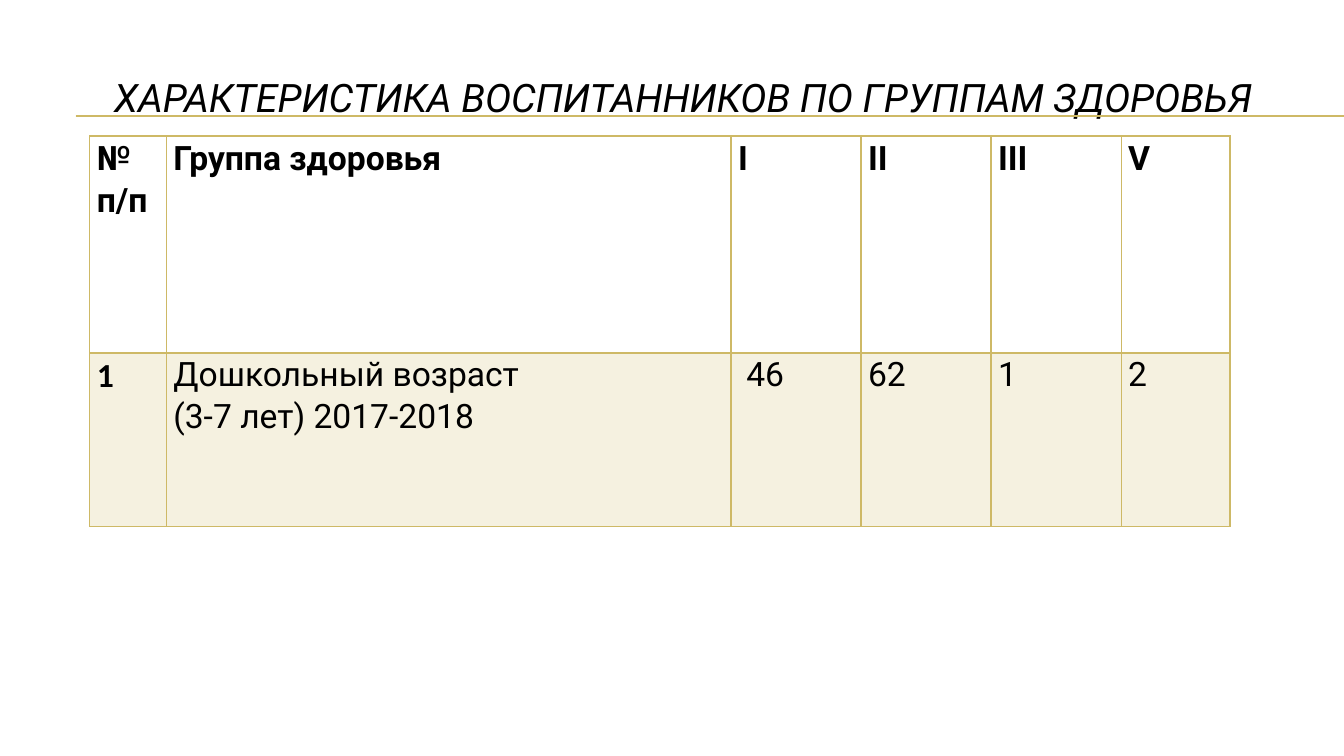
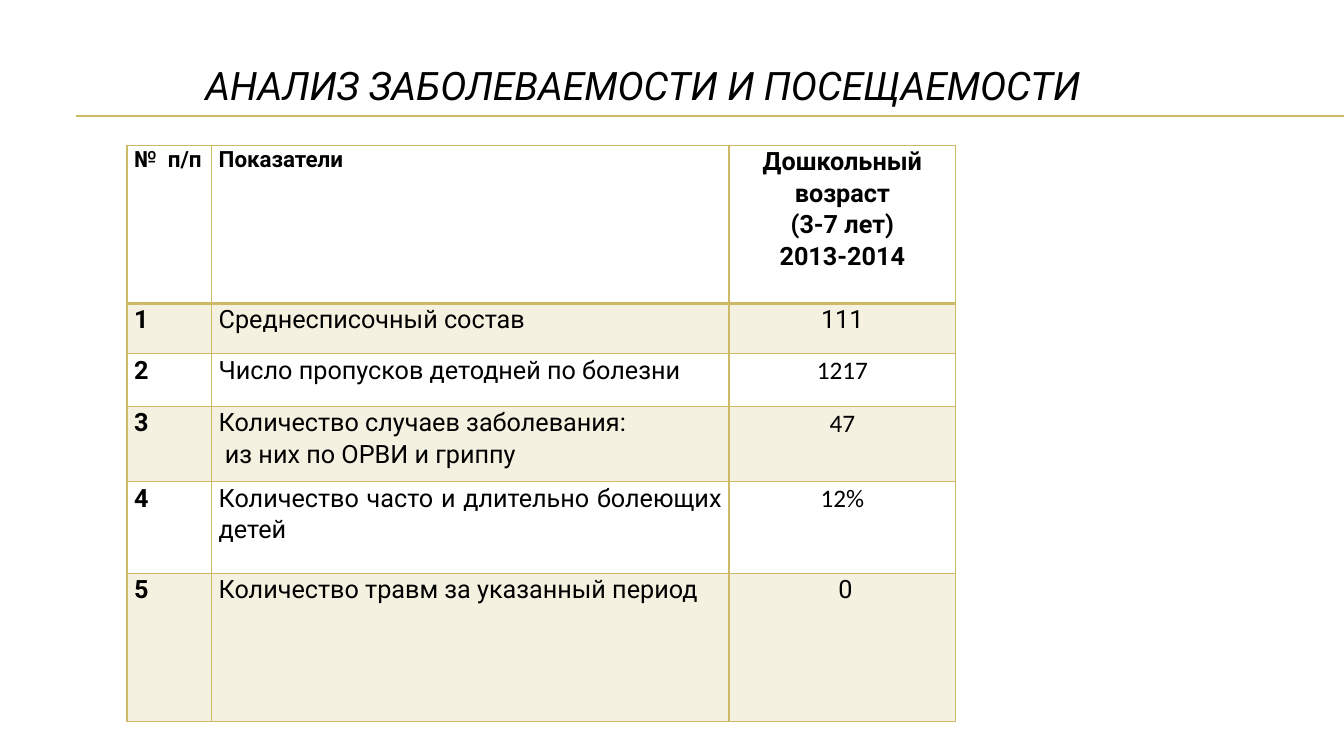
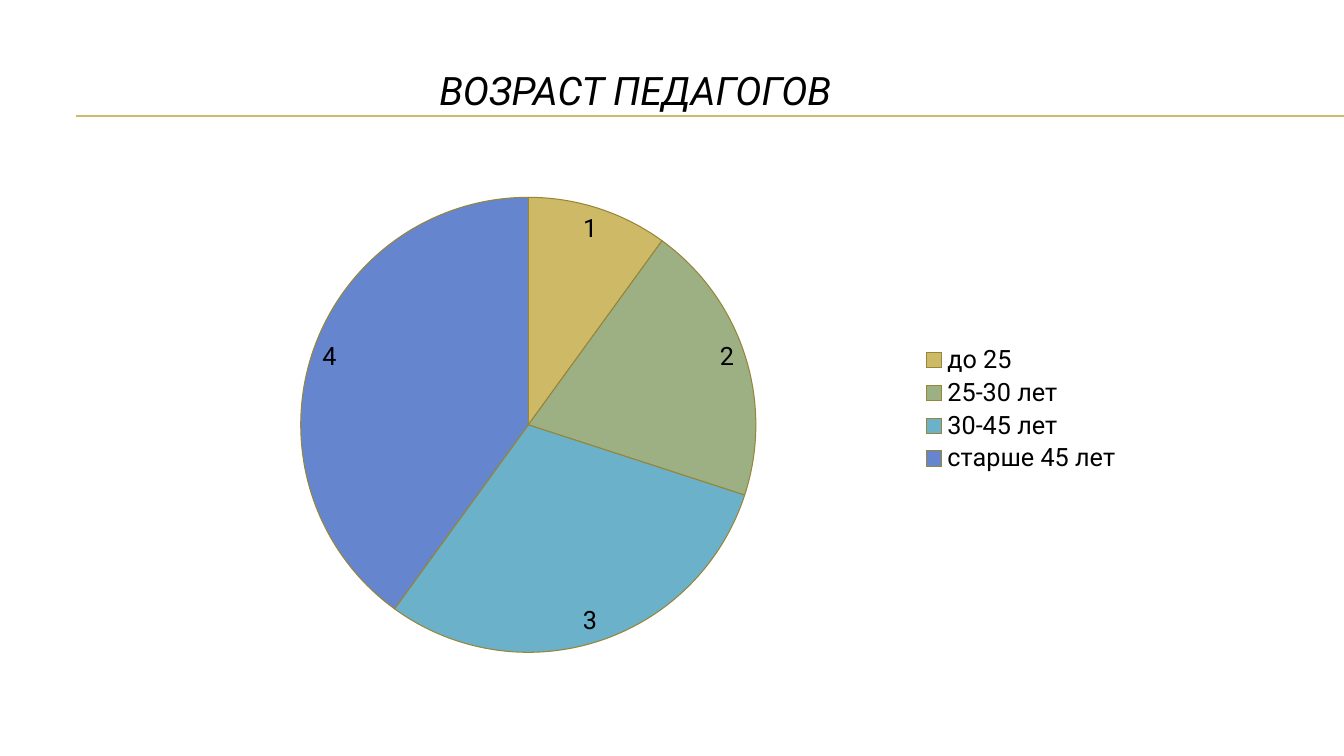
from lxml import etree
from pptx import Presentation
from pptx.chart.data import CategoryChartData
from pptx.dml.color import RGBColor
from pptx.enum.chart import XL_CHART_TYPE, XL_LABEL_POSITION, XL_LEGEND_POSITION
from pptx.enum.shapes import MSO_CONNECTOR
from pptx.enum.text import MSO_ANCHOR, PP_ALIGN
from pptx.oxml import parse_xml
from pptx.oxml.ns import nsdecls, qn
from pptx.util import Inches, Pt

CENTER, JUSTIFY = PP_ALIGN.CENTER, PP_ALIGN.JUSTIFY
MIDDLE = MSO_ANCHOR.MIDDLE
STRAIGHT = MSO_CONNECTOR.STRAIGHT
PIE = XL_CHART_TYPE.PIE
BEST_FIT = XL_LABEL_POSITION.BEST_FIT
LEGEND_RIGHT = XL_LEGEND_POSITION.RIGHT

SLIDE_WIDTH, SLIDE_HEIGHT = 13.33, 7.5
TITLE_ONLY = 5


def color(value):
    return RGBColor.from_string(value)


class Deck:
    """Shared style and the slide being built."""

    font_name = "Roboto"
    number_font = "Calibri"
    text_color = "000000"
    gold = "CEB966"
    band = "F5F1E0"
    slice_line = "978538"
    slice_colors = ("CEB966", "9CB084", "6BB1C9", "6585CF")

    def __init__(self):
        self.presentation = Presentation()
        self.presentation.slide_width = Inches(SLIDE_WIDTH)
        self.presentation.slide_height = Inches(SLIDE_HEIGHT)
        self.slide = None

    def style_font(self, font, size, bold=False, italic=False, name=None):
        font.name = name or self.font_name
        font.size = Pt(size)
        font.bold = bold
        font.italic = italic
        font.color.rgb = color(self.text_color)

    def add_slide(self, title, left, top, width, height):
        layout = self.presentation.slide_layouts[TITLE_ONLY]
        self.slide = self.presentation.slides.add_slide(layout)
        for y in (1.15, 1.16):
            self.add_rule(y)
        shape = self.slide.shapes.title
        shape.left, shape.top = Inches(left), Inches(top)
        shape.width, shape.height = Inches(width), Inches(height)
        frame = shape.text_frame
        frame.text = title
        frame.word_wrap = True
        frame.vertical_anchor = MIDDLE
        paragraph = frame.paragraphs[0]
        paragraph.alignment = CENTER
        self.style_font(paragraph.runs[0].font, 28, italic=True)

    def add_rule(self, y):
        rule = self.slide.shapes.add_connector(
            STRAIGHT, Inches(0.75), Inches(y), Inches(SLIDE_WIDTH), Inches(y))
        rule.line.color.rgb = color(self.gold)
        rule.line.width = Pt(0.75)
        etree.SubElement(rule.element.spPr, qn("a:effectLst"))

    def add_table(self, left, top, widths, heights, rows, size,
                  centered=(), header_sizes=None, number_cells=()):
        """Bold header and first column, tinted odd rows, gold borders."""
        table = self.slide.shapes.add_table(
            len(rows), len(widths), Inches(left), Inches(top),
            Inches(sum(widths)), Inches(sum(heights))).table
        table.first_row = table.horz_banding = False
        for column, width in zip(table.columns, widths):
            column.width = Inches(width)
        for row, height in zip(table.rows, heights):
            row.height = Inches(height)
        for i, texts in enumerate(rows):
            for j, text in enumerate(texts):
                cell = table.cell(i, j)
                self.add_borders(cell, bottom=2 if i == 0 else 1,
                                 top=2 if i == 1 else 1)
                if i % 2:
                    cell.fill.solid()
                    cell.fill.fore_color.rgb = color(self.band)
                else:
                    cell.fill.background()
                cell.margin_left = cell.margin_right = Inches(0.07)
                cell.margin_top = cell.margin_bottom = 0
                cell.text_frame.text = text
                header_size = header_sizes[j] if header_sizes else size
                name = self.number_font if (i, j) in number_cells else None
                for paragraph in cell.text_frame.paragraphs:
                    paragraph.alignment = CENTER if j in centered else JUSTIFY
                    paragraph.line_spacing = 1.07
                    for run in paragraph.runs:
                        self.style_font(run.font, size if i else header_size,
                                        bold=i == 0 or j == 0, name=name)

    def add_borders(self, cell, top, bottom):
        properties = cell._tc.get_or_add_tcPr()
        for side, points in (("L", 1), ("R", 1), ("T", top), ("B", bottom)):
            properties.append(parse_xml(
                f'<a:ln{side} {nsdecls("a")} w="{Pt(points)}"><a:solidFill>'
                f'<a:srgbClr val="{self.gold}"/></a:solidFill></a:ln{side}>'))

    def add_pie(self, left, top, width, height, categories, values,
                plot_box, legend_box):
        data = CategoryChartData()
        data.categories = categories
        data.add_series("Series 1", values)
        chart = self.slide.shapes.add_chart(
            PIE, Inches(left), Inches(top), Inches(width), Inches(height),
            data).chart
        self.style_font(chart.font, 18)
        chart.has_title = False
        chart.has_legend = True
        chart.legend.position = LEGEND_RIGHT
        chart.legend.include_in_layout = False

        # Slices and their values
        plot = chart.plots[0]
        plot.vary_by_categories = True
        for index, slice_color in enumerate(self.slice_colors):
            style = plot.series[0].points[index].format
            style.fill.solid()
            style.fill.fore_color.rgb = color(slice_color)
            style.line.color.rgb = color(self.slice_line)
            style.line.width = Pt(0.75)
        plot.has_data_labels = True
        labels = plot.data_labels
        labels.show_value = True
        labels.show_percentage = False
        labels.position = BEST_FIT
        self.style_font(labels.font, 18)

        # Fixed places of the plot and the legend
        plot_area = chart.element.find(".//" + qn("c:plotArea"))
        self.place_chart_part(plot_area, 0, plot_box, inner=True)
        legend = chart.element.find(".//" + qn("c:legend"))
        self.place_chart_part(legend, 1, legend_box)

    def place_chart_part(self, part, index, box, inner=False):
        for layout in part.findall(qn("c:layout")):
            part.remove(layout)
        settings = [("layoutTarget", "inner")] if inner else []
        settings += [("xMode", "edge"), ("yMode", "edge"), *zip("xywh", box)]
        content = "".join(f'<c:{tag} val="{value}"/>' for tag, value in settings)
        part.insert(index, parse_xml(
            f'<c:layout {nsdecls("c")}><c:manualLayout>{content}'
            f'</c:manualLayout></c:layout>'))


def main():
    deck = Deck()

    # Health groups
    deck.add_slide("ХАРАКТЕРИСТИКА ВОСПИТАННИКОВ ПО ГРУППАМ ЗДОРОВЬЯ",
                   0.44, 0.5, 12.67, 0.92)
    deck.add_table(
        0.89, 1.35, [0.76, 5.6, 1.29, 1.29, 1.29, 1.08], [2.15, 1.72],
        [["№  п/п", "Группа здоровья", "I", "II", "III", "V"],
         ["1", "Дошкольный возраст\n(3-7 лет) 2017-2018",
          " 46", "62", "1", "2"]],
        size=24, number_cells={(1, 0)})

    # Illness and attendance
    deck.add_slide("АНАЛИЗ ЗАБОЛЕВАЕМОСТИ И ПОСЕЩАЕМОСТИ",
                   0.69, 0.49, 11.37, 0.7)
    deck.add_table(
        1.26, 1.44, [0.84, 5.13, 2.25], [1.57, 0.5, 0.52, 0.75, 0.91, 1.47],
        [["№  п/п", "Показатели",
          "Дошкольный возраст\n(3-7 лет)\n2013-2014"],
         ["1", "Среднесписочный состав", "111"],
         ["2", "Число пропусков детодней по болезни", "1217"],
         ["3", "Количество случаев заболевания:\n из них по ОРВИ и гриппу",
          "47"],
         ["4", "Количество часто и длительно болеющих детей", "12%"],
         ["5", "Количество травм за указанный период", " 0"]],
        size=18, centered={2}, header_sizes=[16, 16, 18],
        number_cells={(2, 2), (3, 2), (4, 2)})

    # Age of teachers
    deck.add_slide("ВОЗРАСТ ПЕДАГОГОВ", 1.6, 0.47, 9.4, 0.85)
    deck.add_pie(1.95, 1.65, 9.4, 5.13,
                 ["до 25", "25-30 лет", "30-45 лет", "старше 45 лет"],
                 [1, 2, 3, 4], plot_box=(0.05, 0.06, 0.6, 0.88),
                 legend_box=(0.76, 0.34, 0.22, 0.26))

    deck.presentation.save("out.pptx")


if __name__ == "__main__":
    main()
